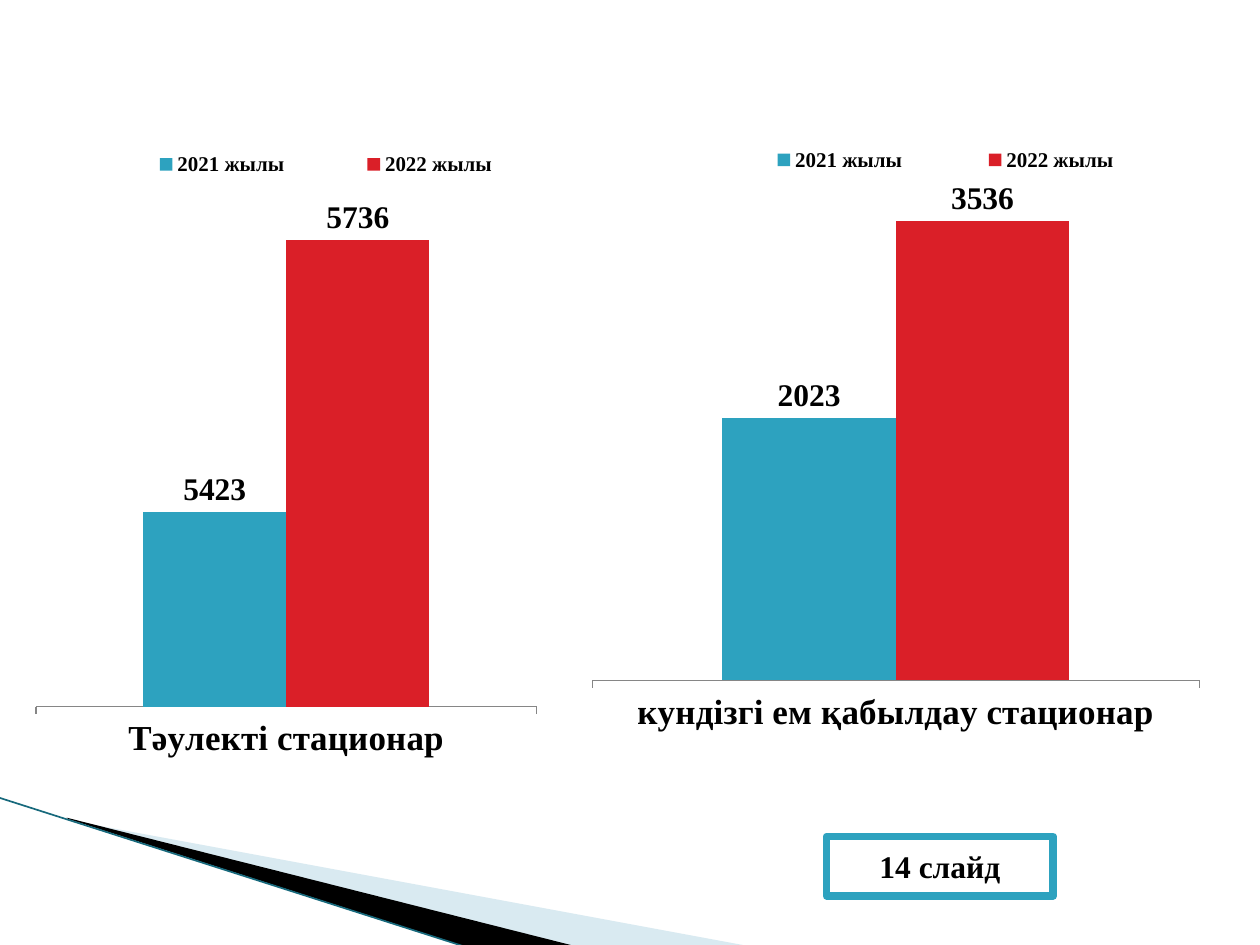
from dataclasses import dataclass

from lxml.etree import SubElement
from pptx import Presentation
from pptx.chart.data import CategoryChartData
from pptx.dml.color import RGBColor
from pptx.enum.chart import XL_CHART_TYPE, XL_LABEL_POSITION, XL_LEGEND_POSITION
from pptx.enum.chart import XL_TICK_LABEL_POSITION, XL_TICK_MARK
from pptx.enum.shapes import MSO_CONNECTOR, MSO_SHAPE
from pptx.enum.text import MSO_ANCHOR, PP_ALIGN
from pptx.oxml import parse_xml
from pptx.oxml.ns import nsdecls, qn
from pptx.util import Inches, Pt

TEAL = RGBColor(0x2D, 0xA2, 0xBF)
RED = RGBColor(0xDA, 0x1F, 0x28)
PALE = RGBColor(0xA0, 0xCB, 0xDC)
DEEP = RGBColor(0x17, 0x69, 0x7C)
GRAY = RGBColor(0x86, 0x86, 0x86)
BLACK = RGBColor(0, 0, 0)
WHITE = RGBColor(0xFF, 0xFF, 0xFF)
FONT = "Times New Roman"
YEARS = (("2021 жылы", TEAL), ("2022 жылы", RED))

Box = tuple[float, float, float, float]


@dataclass
class Bars:
    ward: str
    counts: tuple[int, int]
    place: Box
    plot: Box
    legend: Box
    low: int
    high: int


@dataclass
class Wedge:
    points: list[tuple[float, float]]
    frame: Box
    color: RGBColor
    alpha: int


CHARTS = (
    Bars("Тәулекті стационар", (5423, 5736), (0.28, 1.07, 4.33, 5.04),
         (0.28, 1.46, 3.98, 4.15), (0.66, 1.13, 3.85, 0.35), 5200, 5800),
    Bars("кундізгі ем қабылдау стационар", (2023, 3536), (4.61, 0.92, 5.12, 5.2),
         (4.7, 1.28, 4.82, 4.12), (5.54, 1.09, 3.93, 0.36), 0, 4000),
)
WEDGES = (
    Wedge([(0.55, 6.51), (5.95, 7.51), (4.56, 7.51), (0.55, 6.5)],
          (0.78, 5.47, 4.16, 1.58), PALE, 40),
    Wedge([(0.53, 6.49), (4.57, 7.51), (3.72, 7.52), (0.54, 6.5)],
          (-0.06, 6.33, 4.16, 0.92), BLACK, 100),
)


def style(font, size: int) -> None:
    font.name = FONT
    font.size = Pt(size)
    font.bold = True
    font.color.rgb = BLACK


def lay_out(parent, box: Box, place: Box, inner: bool = False) -> None:
    """Fix a chart part, given in slide inches, inside the chart's place."""
    left, top, width, height = place
    parts = ((box[0] - left) / width, (box[1] - top) / height,
             box[2] / width, box[3] / height)
    target = '<c:layoutTarget val="inner"/>' if inner else ""
    modes = "".join(f'<c:{axis}Mode val="edge"/>' for axis in "xy")
    sizes = "".join(f'<c:{key} val="{val:.4f}"/>' for key, val in zip("xywh", parts))
    for old in parent.findall(qn("c:layout")):
        parent.remove(old)
    layout = parse_xml(
        f'<c:layout {nsdecls("c")}><c:manualLayout>{target}{modes}{sizes}'
        "</c:manualLayout></c:layout>")
    if inner:
        parent.insert(0, layout)
    else:
        parent.find(qn("c:legendPos")).addnext(layout)


def add_bars(slide, bars: Bars) -> None:
    data = CategoryChartData()
    data.categories = [bars.ward]
    for (year, _), count in zip(YEARS, bars.counts):
        data.add_series(year, [count])
    chart = slide.shapes.add_chart(
        XL_CHART_TYPE.COLUMN_CLUSTERED, *map(Inches, bars.place), data).chart
    chart.has_title = False
    style(chart.font, 18)

    chart.has_legend = True
    legend = chart.legend
    legend.position = XL_LEGEND_POSITION.RIGHT
    legend.include_in_layout = False
    style(legend.font, 12)
    lay_out(legend._element, bars.legend, bars.place)
    lay_out(chart._chartSpace.chart.plotArea, bars.plot, bars.place, inner=True)

    plot = chart.plots[0]
    plot.gap_width = 150
    plot.overlap = 0
    plot.vary_by_categories = False
    for series, (_, color) in zip(plot.series, YEARS):
        series.format.fill.solid()
        series.format.fill.fore_color.rgb = color
        labels = series.data_labels
        labels.show_value = True
        labels.position = XL_LABEL_POSITION.OUTSIDE_END
        style(labels.font, 18)

    axis = chart.category_axis
    axis.major_tick_mark = XL_TICK_MARK.OUTSIDE
    axis.tick_label_position = XL_TICK_LABEL_POSITION.LOW
    axis.format.line.color.rgb = GRAY
    style(axis.tick_labels.font, 20)
    scale = chart.value_axis
    scale.minimum_scale = bars.low
    scale.maximum_scale = bars.high
    scale.has_major_gridlines = False
    scale.visible = False


def set_frame(shape, frame: Box) -> None:
    """Give a freeform a new frame while its outline stays in place."""
    left, top, width, height = map(Inches, frame)
    outline = next(shape._element.iter(qn("a:path")))
    for point in outline.iter(qn("a:pt")):
        point.set("x", str(int(point.get("x")) + shape.left - left))
        point.set("y", str(int(point.get("y")) + shape.top - top))
    outline.set("w", str(width))
    outline.set("h", str(height))
    shape.left, shape.top, shape.width, shape.height = left, top, width, height


def add_wedge(slide, wedge: Wedge) -> None:
    points = [(Inches(x), Inches(y)) for x, y in wedge.points]
    pen = slide.shapes.build_freeform(*points[0])
    pen.add_line_segments(points[1:], close=True)
    shape = pen.convert_to_shape()
    set_frame(shape, wedge.frame)
    shape.shadow.inherit = False
    shape.fill.solid()
    shape.fill.fore_color.rgb = wedge.color
    shape.line.fill.background()
    if wedge.alpha < 100:
        tint = shape._element.spPr.find(qn("a:solidFill"))[0]
        SubElement(tint, qn("a:alpha"), val=str(wedge.alpha * 1000))


def add_edge(slide) -> None:
    edge = slide.shapes.add_connector(
        MSO_CONNECTOR.STRAIGHT, *map(Inches, (-0.01, 6.33, 3.71, 7.52)))
    edge.line.color.rgb = DEEP
    edge.line.width = Pt(0.95)
    SubElement(edge._element.spPr, qn("a:effectLst"))


def add_badge(slide) -> None:
    badge = slide.shapes.add_shape(
        MSO_SHAPE.RECTANGLE, *map(Inches, (6.56, 6.64, 1.8, 0.47)))
    badge.shadow.inherit = False
    badge.fill.solid()
    badge.fill.fore_color.rgb = WHITE
    badge.line.color.rgb = TEAL
    badge.line.width = Pt(4.33)
    SubElement(badge.line._get_or_add_ln(), qn("a:round"))
    frame = badge.text_frame
    frame.text = "14 слайд"
    frame.vertical_anchor = MSO_ANCHOR.MIDDLE
    frame.paragraphs[0].alignment = PP_ALIGN.CENTER
    style(frame.paragraphs[0].runs[0].font, 18)


def main() -> None:
    deck = Presentation()
    deck.slide_width = Inches(10)
    deck.slide_height = Inches(7.5)
    slide = deck.slides.add_slide(deck.slide_layouts[6])
    for wedge in WEDGES:
        add_wedge(slide, wedge)
    add_edge(slide)
    for bars in CHARTS:
        add_bars(slide, bars)
    add_badge(slide)
    deck.save("out.pptx")


if __name__ == "__main__":
    main()
